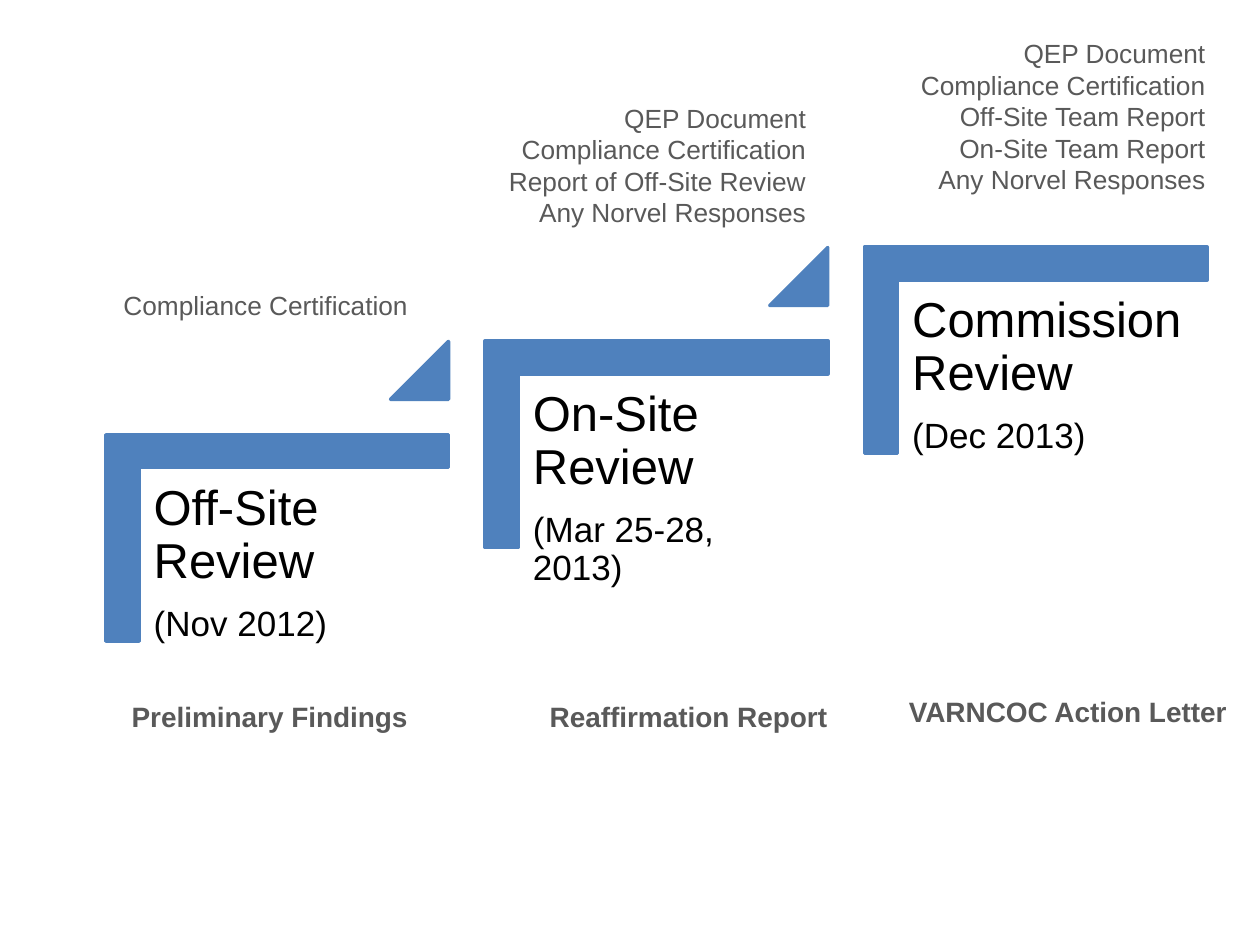
from pptx import Presentation
from pptx.dml.color import RGBColor
from pptx.enum.shapes import MSO_SHAPE
from pptx.enum.text import PP_ALIGN
from pptx.util import Inches, Pt

COLORS = {"step": "4F81BD", "title": "000000", "label": "595959"}
COLS, ROWS = 20, 15
STEP_X, STEP_Y = 6.02, -1.49

prs = Presentation()
prs.slide_width, prs.slide_height = Inches(10), Inches(7.5)
col, row = prs.slide_width / COLS, prs.slide_height / ROWS
s = prs.slides.add_slide(prs.slide_layouts[6])


def add_step_shape(kind, x, y, w, h, adjustments):
    sp = s.shapes.add_shape(kind, int(x * col), int(y * row), int(w * col), int(h * row))
    sp.shadow.inherit = False
    sp.fill.solid()
    sp.fill.fore_color.rgb = RGBColor.from_string(COLORS["step"])
    sp.line.color.rgb = RGBColor.from_string(COLORS["step"])
    sp.line.width = Pt(2)
    for i, value in enumerate(adjustments):
        sp.adjustments[i] = value
    return sp


def add_text(x, y, w, h, lines, color, align=PP_ALIGN.LEFT, bold=False):
    sp = s.shapes.add_textbox(int(x * col), int(y * row), int(w * col), int(h * row))
    tf = sp.text_frame
    tf.word_wrap = True
    for i, (text, size) in enumerate(lines):
        p = tf.paragraphs[0] if i == 0 else tf.add_paragraph()
        p.alignment = align
        r = p.add_run()
        r.text = text
        r.font.name = "Arial"
        r.font.size = Pt(size)
        r.font.bold = bold
        r.font.color.rgb = RGBColor.from_string(COLORS[color])
    return tf


steps = [
    ("Off-Site Review", "(Nov 2012)"),
    ("On-Site Review", "(Mar 25-28, 2013)"),
    ("Commission Review", "(Dec 2013)"),
]
for n, (title, date) in enumerate(steps):
    dx, dy = n * STEP_X, n * STEP_Y
    corner = add_step_shape(MSO_SHAPE.CORNER, 2.76 + dx, 5.82 + dy, 3.28, 5.44, (0.16, 0.16))
    corner.rotation = 90
    tf = add_text(2.2 + dx, 7.43 + dy, 4.92, 4.3, [(title, 28), (date, 20)], "title")
    tf.margin_left = tf.margin_right = tf.margin_top = tf.margin_bottom = Inches(0.12)
    for p in tf.paragraphs:
        p.line_spacing = 0.9
        p.space_after = Pt(9.8)
    if n < len(steps) - 1:
        add_step_shape(MSO_SHAPE.ISOSCELES_TRIANGLE, 6.2 + dx, 5.42 + dy, 0.92, 0.92, (1,))

inputs = [
    (0.83, 4.5, ["Compliance Certification"]),
    (7.15, 1.52, ["QEP Document", "Compliance Certification",
                  "Report of Off-Site Review", "Any Norvel Responses"]),
    (13.49, 0.5, ["QEP Document", "Compliance Certification", "Off-Site Team Report",
                  "On-Site Team Report", "Any Norvel Responses"]),
]
for x, y, lines in inputs:
    add_text(x, y, 5.84, 0.2 + 0.5 * len(lines), [(line, 15) for line in lines],
             "label", PP_ALIGN.RIGHT)

outcomes = [
    (0.83, 11, "Preliminary Findings"),
    (7.49, 11, "Reaffirmation Report"),
    (13.83, 10.92, "VARNCOC Action Letter"),
]
for x, y, text in outcomes:
    add_text(x, y, 5.84, 0.74, [(text, 16)], "label", PP_ALIGN.RIGHT, bold=True)

prs.save("out.pptx")
